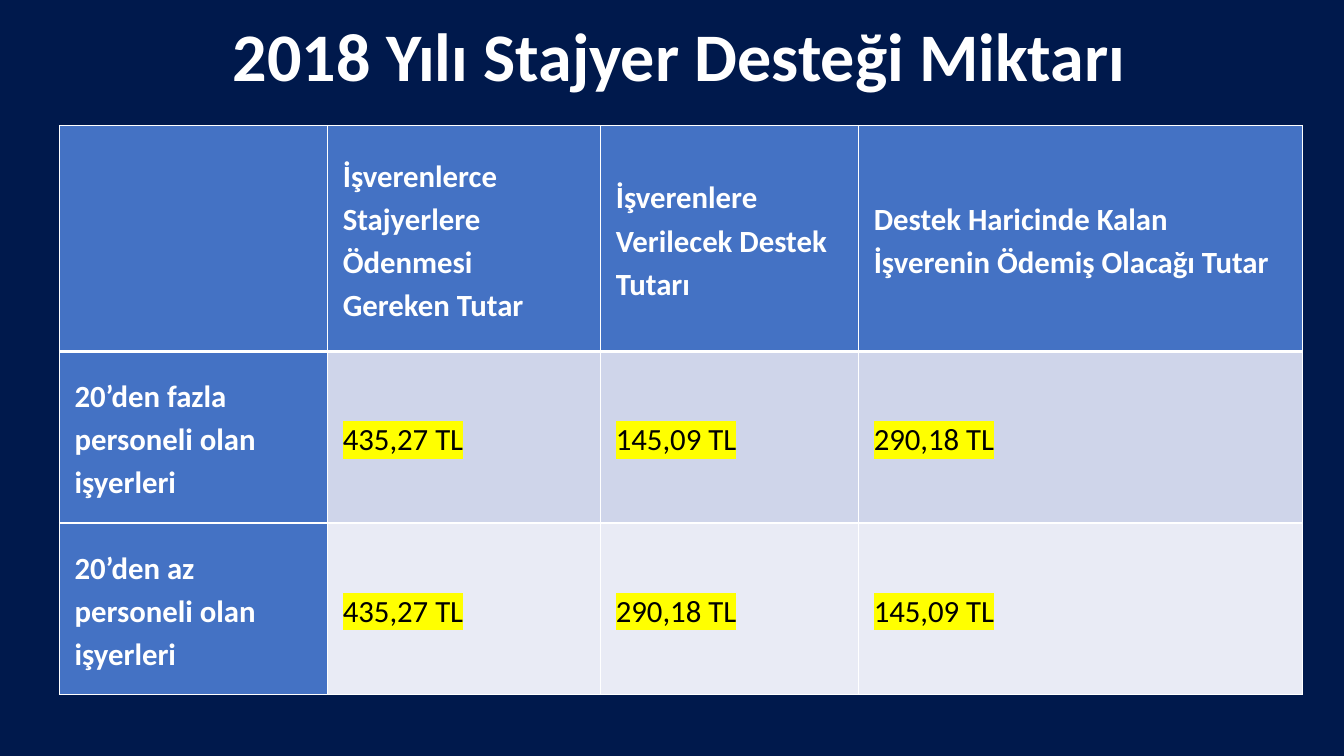
from dataclasses import dataclass

from lxml import etree
from pptx import Presentation
from pptx.dml.color import RGBColor
from pptx.enum.text import MSO_ANCHOR, MSO_AUTO_SIZE, PP_ALIGN
from pptx.oxml.ns import qn
from pptx.util import Cm, Pt

BOTTOM, MIDDLE = MSO_ANCHOR.BOTTOM, MSO_ANCHOR.MIDDLE
LEFT, CENTER = PP_ALIGN.LEFT, PP_ALIGN.CENTER
NO_FIT = MSO_AUTO_SIZE.NONE
TITLE_ONLY = 5


@dataclass(frozen=True)
class Theme:
    font: str = "Calibri"
    background: str = "00194C"
    light: str = "FFFFFF"
    dark: str = "000000"
    header: str = "4472C4"
    bands: tuple = ("CFD5EA", "E9EBF5")
    highlight: str = "FFFF00"
    title_size: float = 48.6
    table_size: float = 22
    thin: float = 1
    thick: float = 3


THEME = Theme()

TITLE = "2018 Yılı Stajyer Desteği Miktarı"
SUPPORT_ROWS = [
    ["", "İşverenlerce Stajyerlere Ödenmesi Gereken Tutar",
     "İşverenlere Verilecek Destek Tutarı",
     "Destek Haricinde Kalan İşverenin Ödemiş Olacağı Tutar"],
    ["20’den fazla personeli olan işyerleri", "435,27 TL", "145,09 TL", "290,18 TL"],
    ["20’den az personeli olan işyerleri", "435,27 TL", "290,18 TL", "145,09 TL"],
]
COLUMN_WIDTHS = [6.76, 6.88, 6.5, 11.18]
ROW_HEIGHTS = [5.69, 4.32, 4.32]


def add_color(parent, tag, color):
    node = etree.SubElement(parent, qn(tag))
    etree.SubElement(node, qn("a:srgbClr")).set("val", color)
    return node


def write_text(tf, text, size, color, bold=False, align=LEFT, spacing=1.0,
               highlight=None):
    p = tf.paragraphs[0]
    p.alignment = align
    p.line_spacing = spacing
    p.space_before = Pt(0)
    r = p.add_run()
    r.text = text
    r.font.name = THEME.font
    r.font.size = Pt(size)
    r.font.bold = bold
    r.font.color.rgb = RGBColor.from_string(color)
    if highlight:
        props = r.font._element
        mark = add_color(props, "a:highlight", highlight)
        props.find(qn("a:solidFill")).addnext(mark)


class SlideBuilder:
    def __init__(self, prs, theme):
        self.theme = theme
        self.s = prs.slides.add_slide(prs.slide_layouts[TITLE_ONLY])
        fill = self.s.background.fill
        fill.solid()
        fill.fore_color.rgb = RGBColor.from_string(theme.background)

    def title(self, text, left, top, width, height):
        sp = self.s.shapes.title
        sp.left, sp.top, sp.width, sp.height = map(Cm, (left, top, width, height))
        tf = sp.text_frame
        tf.word_wrap = True
        tf.auto_size = NO_FIT
        tf.vertical_anchor = BOTTOM
        write_text(tf, text, self.theme.title_size, self.theme.light,
                   bold=True, align=CENTER, spacing=0.9)

    def table(self, rows, left, top, widths, heights):
        frame = self.s.shapes.add_table(
            len(rows), len(widths), Cm(left), Cm(top),
            Cm(sum(widths)), Cm(sum(heights)))
        table = frame.table
        for column, width in zip(table.columns, widths):
            column.width = Cm(width)
        for row, height in zip(table.rows, heights):
            row.height = Cm(height)
        for i, row in enumerate(rows):
            for j, text in enumerate(row):
                self.cell(table.cell(i, j), text, i, j)

    def cell(self, cell, text, i, j):
        theme = self.theme
        is_heading = i == 0 or j == 0
        fill = theme.header if is_heading else theme.bands[(i - 1) % 2]
        cell.fill.solid()
        cell.fill.fore_color.rgb = RGBColor.from_string(fill)
        cell.vertical_anchor = MIDDLE
        cell.margin_left = cell.margin_right = Cm(0.38)
        cell.margin_top = cell.margin_bottom = 0
        self.borders(cell, top=theme.thick if i == 1 else theme.thin,
                     bottom=theme.thick if i == 0 else theme.thin)
        if text:
            write_text(cell.text_frame, text, theme.table_size,
                       theme.light if is_heading else theme.dark,
                       bold=is_heading, spacing=1.15,
                       highlight=None if is_heading else theme.highlight)

    def borders(self, cell, top, bottom):
        props = cell._tc.get_or_add_tcPr()
        thin = self.theme.thin
        sides = [("L", thin), ("R", thin), ("T", top), ("B", bottom)]
        for position, (side, width) in enumerate(sides):
            line = etree.Element(qn(f"a:ln{side}"), w=str(Pt(width)))
            add_color(line, "a:solidFill", self.theme.light)
            props.insert(position, line)


def main():
    prs = Presentation()
    prs.slide_width, prs.slide_height = Cm(33.87), Cm(19.05)
    slide = SlideBuilder(prs, THEME)
    slide.title(TITLE, 1.83, 1.3, 30.58, 1.24)
    slide.table(SUPPORT_ROWS, 1.5, 3.17, COLUMN_WIDTHS, ROW_HEIGHTS)
    prs.save("out.pptx")


if __name__ == "__main__":
    main()
